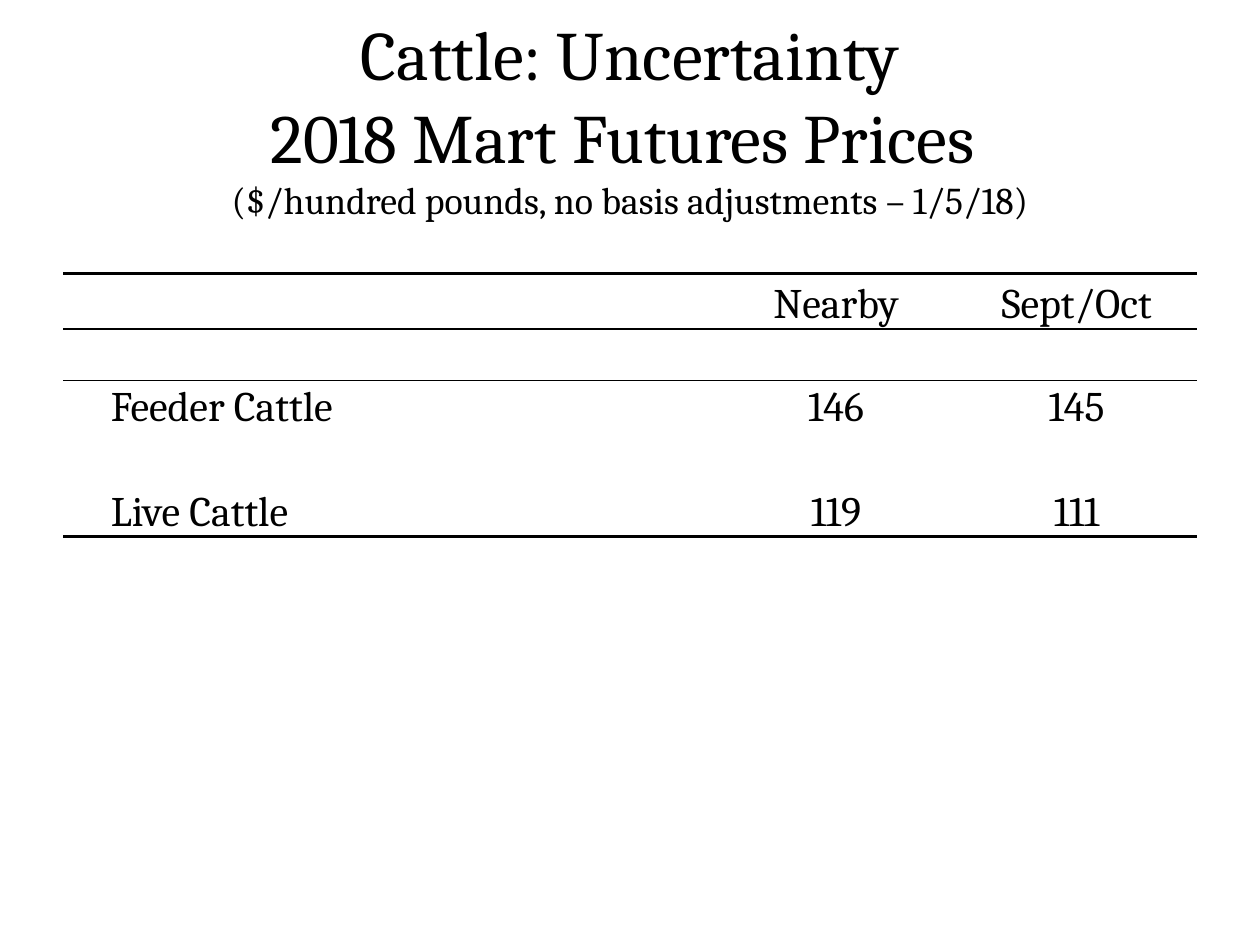
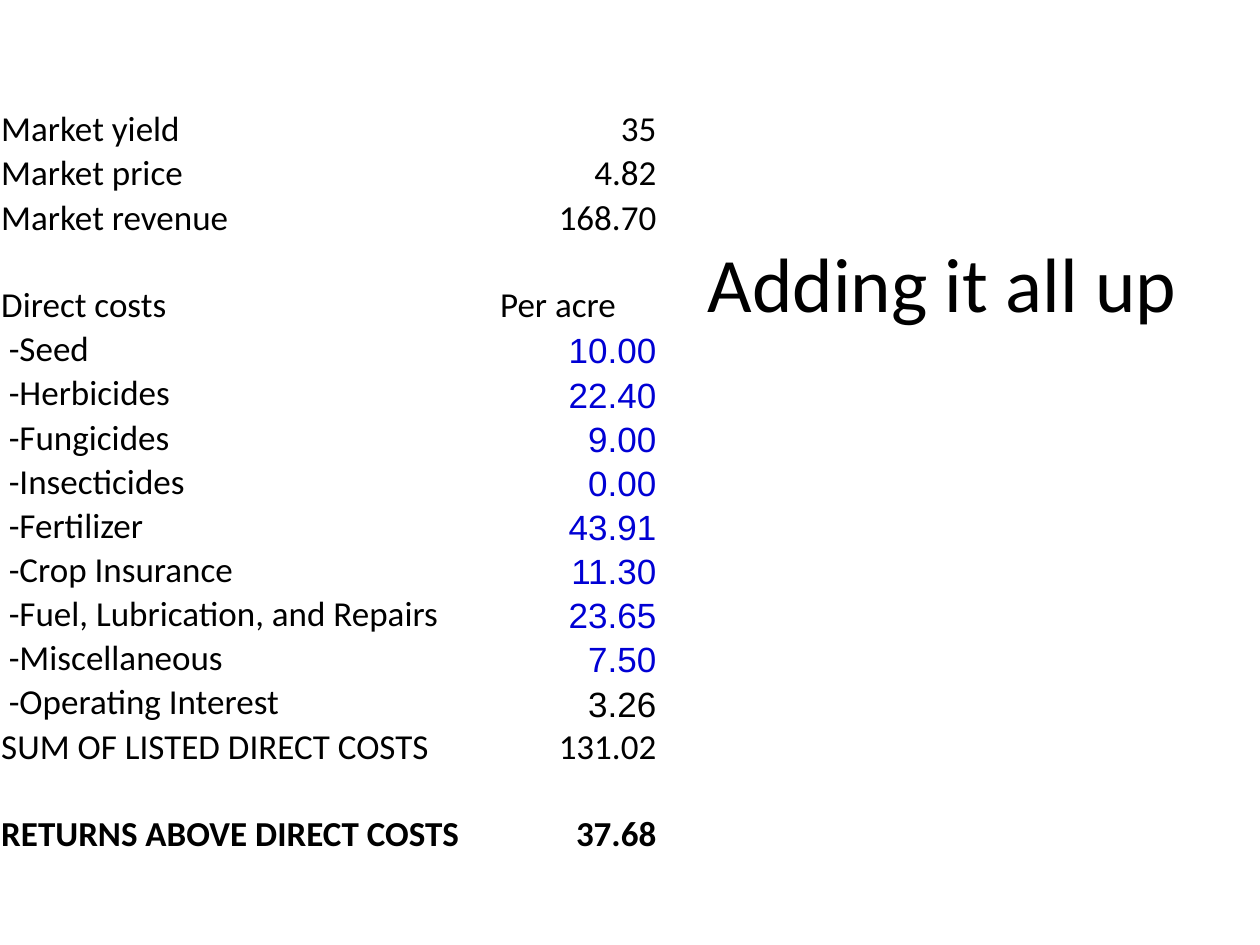
from dataclasses import dataclass, field

from lxml.etree import SubElement
from pptx import Presentation
from pptx.dml.color import RGBColor
from pptx.enum.text import MSO_ANCHOR, MSO_AUTO_SIZE, PP_ALIGN
from pptx.oxml.ns import qn
from pptx.util import Inches, Pt

# Shared grid and colours
COLUMNS, ROWS = 100, 75
SLIDE_WIDTH, SLIDE_HEIGHT = Inches(10), Inches(7.5)
BLACK, WHITE, INPUT_BLUE = "000000", "FFFFFF", "0000D4"
NO_TABLE_STYLE = "{2D5ABB26-0587-4C30-8999-92F81FD0307C}"
CELL_MARGINS = {"margin_left": Inches(0.01), "margin_right": Inches(0.01),
                "margin_top": Inches(0.01), "margin_bottom": 0}


@dataclass(frozen=True)
class Box:
    """Position and size in grid columns and rows."""
    left: float
    top: float
    width: float
    height: float


@dataclass(frozen=True)
class TextStyle:
    font: str
    size: float
    color: str = BLACK
    bold: bool = False


@dataclass(frozen=True)
class Entry:
    """Text of one table cell."""
    text: str
    style: TextStyle
    align: PP_ALIGN = PP_ALIGN.LEFT
    indent: float = 0


@dataclass(frozen=True)
class TableLayout:
    left: float
    top: float
    widths: list[float]
    heights: list[float]
    fill: str | None = None
    rules: dict[int, dict[str, int]] = field(default_factory=dict)


@dataclass(frozen=True)
class BudgetLine:
    label: str = ""
    value: str = ""
    label_style: TextStyle | None = None
    value_style: TextStyle | None = None
    align: PP_ALIGN = PP_ALIGN.RIGHT
    indent: float = 0
    spanned: bool = True


def across(columns: float) -> int:
    return round(SLIDE_WIDTH * columns / COLUMNS)


def down(rows: float) -> int:
    return round(SLIDE_HEIGHT * rows / ROWS)


def rgb(hex_color: str) -> RGBColor:
    return RGBColor.from_string(hex_color)


def set_values(target, values: dict) -> None:
    for name, value in values.items():
        setattr(target, name, value)


def add_text(paragraph, text: str, style: TextStyle) -> None:
    run = paragraph.add_run()
    run.text = text
    set_values(run.font, {"name": style.font, "size": Pt(style.size), "bold": style.bold})
    run.font.color.rgb = rgb(style.color)


def add_titled_slide(presentation, box: Box, lines: list[tuple[str, TextStyle]]):
    slide = presentation.slides.add_slide(presentation.slide_layouts[5])
    title = slide.shapes.title
    set_values(title, {"left": across(box.left), "top": down(box.top),
                       "width": across(box.width), "height": down(box.height)})
    set_values(title.text_frame, {"word_wrap": True, "auto_size": MSO_AUTO_SIZE.NONE,
                                  "vertical_anchor": MSO_ANCHOR.MIDDLE})
    paragraph = title.text_frame.paragraphs[0]
    paragraph.alignment = PP_ALIGN.CENTER
    for number, (text, style) in enumerate(lines):
        if number:
            paragraph.add_line_break()
        add_text(paragraph, text, style)
    return slide


def add_border(cell, side: str, points: int) -> None:
    properties = cell._tc.get_or_add_tcPr()
    line = SubElement(properties, qn(f"a:ln{side}"), w=str(Pt(points)))
    fill = SubElement(line, qn("a:solidFill"))
    SubElement(fill, qn("a:srgbClr"), val=BLACK)


def fill_cell(cell, entry: Entry | None) -> None:
    set_values(cell, {**CELL_MARGINS, "vertical_anchor": MSO_ANCHOR.BOTTOM})
    if entry and entry.text:
        cell.margin_left = Inches(0.01) + across(entry.indent)
        paragraph = cell.text_frame.paragraphs[0]
        paragraph.alignment = entry.align
        add_text(paragraph, entry.text, entry.style)


def add_plain_table(slide, layout: TableLayout, entries: list[list[Entry | None]]):
    frame = slide.shapes.add_table(
        len(layout.heights), len(layout.widths), across(layout.left), down(layout.top),
        across(sum(layout.widths)), down(sum(layout.heights)))
    table = frame.table
    set_values(table, {"first_row": False, "horz_banding": False})
    table._tbl.tblPr.find(qn("a:tableStyleId")).text = NO_TABLE_STYLE
    for column, width in zip(table.columns, layout.widths):
        column.width = across(width)
    for row, height in zip(table.rows, layout.heights):
        row.height = down(height)
    for row_number, row_entries in enumerate(entries):
        for column_number, entry in enumerate(row_entries):
            cell = table.cell(row_number, column_number)
            fill_cell(cell, entry)
            for side, points in layout.rules.get(row_number, {}).items():
                add_border(cell, side, points)
            if layout.fill:
                cell.fill.solid()
                cell.fill.fore_color.rgb = rgb(layout.fill)
            else:
                cell.fill.background()
    return table


# Futures prices
def build_futures_slide(presentation) -> None:
    heading, note = TextStyle("Cambria", 39.6), TextStyle("Cambria", 21.6)
    body = TextStyle("Cambria", 24)
    slide = add_titled_slide(presentation, Box(5, 3, 90, 12.5), [
        ("Cattle: Uncertainty", heading),
        ("2018 Mart Futures Prices ", heading),
        ("($/hundred pounds, no basis adjustments – 1/5/18)", note),
    ])
    prices = [("", "Nearby", "Sept/Oct"), ("", "", ""), ("Feeder Cattle", "146", "145"),
              ("", "", ""), ("Live Cattle", "119", "111")]
    entries = [[Entry(label, body, indent=3.7),
                *(Entry(value, body, PP_ALIGN.CENTER) for value in values)]
               for label, *values in prices]
    layout = TableLayout(5, 21.7, [51.8, 19.1, 19.1], [4.4, 4.1, 4.1, 4.1, 4.2], WHITE,
                         {0: {"T": 2, "B": 1}, 1: {"T": 1}, 4: {"B": 2}})
    add_plain_table(slide, layout, entries)


# Returns above direct costs
def build_budget_slide(presentation) -> None:
    body = TextStyle("Calibri", 20)
    total = TextStyle("Calibri", 20, bold=True)
    cost_input = TextStyle("Arial", 20, INPUT_BLUE)
    computed = TextStyle("Arial", 20)
    slide = add_titled_slide(presentation, Box(49.6, 16.1, 50.4, 12.5),
                             [("Adding it all up", TextStyle("Calibri", 44))])

    def cost(label: str, value: str, style: TextStyle = cost_input,
             spanned: bool = True) -> BudgetLine:
        return BudgetLine(f"-{label}", value, body, style, indent=0.6, spanned=spanned)

    budget = [
        BudgetLine("Market yield", "35", body, body),
        BudgetLine("Market price", "4.82", body, body),
        BudgetLine("Market revenue", "168.70", body, body),
        BudgetLine(spanned=False),
        BudgetLine("Direct costs", "Per acre", body, body, PP_ALIGN.LEFT),
        cost("Seed", "10.00", spanned=False),
        cost("Herbicides", "22.40"),
        cost("Fungicides", "9.00"),
        cost("Insecticides", "0.00"),
        cost("Fertilizer", "43.91"),
        cost("Crop Insurance", "11.30"),
        cost("Fuel, Lubrication, and Repairs", "23.65"),
        cost("Miscellaneous", "7.50"),
        cost("Operating Interest", "3.26", computed),
        BudgetLine("SUM OF LISTED DIRECT COSTS", "131.02", body, body),
        BudgetLine(spanned=False),
        BudgetLine("RETURNS ABOVE DIRECT COSTS", "37.68", total, total),
    ]
    entries = [[Entry(line.label, line.label_style, indent=line.indent), None,
                Entry(line.value, line.value_style, line.align)] for line in budget]
    layout = TableLayout(0, 8.5, [7.6, 32, 12.6], [58.6 / len(budget)] * len(budget))
    table = add_plain_table(slide, layout, entries)
    for row_number, line in enumerate(budget):
        if line.spanned:
            table.cell(row_number, 0).merge(table.cell(row_number, 1))


def main() -> None:
    presentation = Presentation()
    set_values(presentation, {"slide_width": SLIDE_WIDTH, "slide_height": SLIDE_HEIGHT})
    build_futures_slide(presentation)
    build_budget_slide(presentation)
    presentation.save("out.pptx")


if __name__ == "__main__":
    main()
